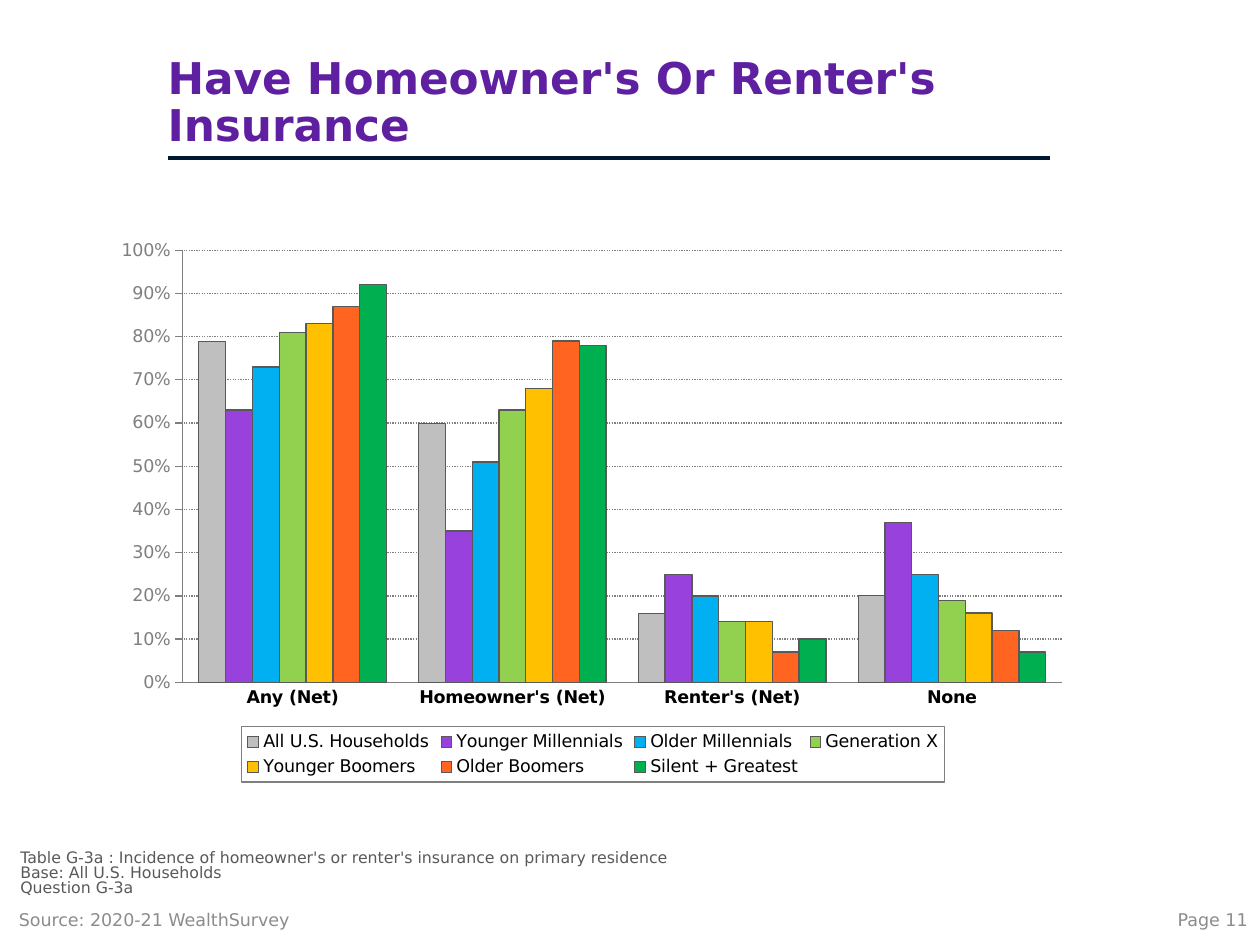
from dataclasses import dataclass

from lxml.etree import SubElement
from pptx import Presentation
from pptx.chart.data import CategoryChartData
from pptx.dml.color import RGBColor
from pptx.enum.chart import XL_CHART_TYPE, XL_LEGEND_POSITION, XL_TICK_MARK
from pptx.enum.dml import MSO_LINE
from pptx.enum.shapes import MSO_CONNECTOR
from pptx.enum.text import MSO_ANCHOR, PP_ALIGN
from pptx.oxml import parse_xml
from pptx.oxml.ns import nsdecls, qn
from pptx.util import Cm, Pt


@dataclass(frozen=True)
class Theme:
    font: str = "DejaVu Sans"
    title: str = "5E20A0"
    rule: str = "00192F"
    note: str = "595959"
    footer: str = "8C8C8C"
    axis: str = "7F7F7F"
    text: str = "000000"
    title_size: float = 25
    body_size: float = 10
    note_size: float = 9


@dataclass(frozen=True)
class Box:
    """A region of the slide, in centimetres."""
    left: float
    top: float
    width: float
    height: float

    def lengths(self):
        return Cm(self.left), Cm(self.top), Cm(self.width), Cm(self.height)


THEME = Theme()
CATEGORIES = ["Any (Net)", "Homeowner's (Net)", "Renter's (Net)", "None"]
GENERATIONS = [
    ("All U.S. Households", "BFBFBF", (0.79, 0.60, 0.16, 0.20)),
    ("Younger Millennials", "9941DD", (0.63, 0.35, 0.25, 0.37)),
    ("Older Millennials", "00B0F0", (0.73, 0.51, 0.20, 0.25)),
    ("Generation X", "92D050", (0.81, 0.63, 0.14, 0.19)),
    ("Younger Boomers", "FFC000", (0.83, 0.68, 0.14, 0.16)),
    ("Older Boomers", "FF6521", (0.87, 0.79, 0.07, 0.12)),
    ("Silent + Greatest", "00B050", (0.92, 0.78, 0.10, 0.07)),
]
NOTES = [
    "Table G-3a : Incidence of homeowner's or renter's insurance on primary residence",
    "Base: All U.S. Households",
    "Question G-3a",
]


def style_font(font, size, color, bold=False):
    font.name = THEME.font
    font.size = Pt(size)
    font.bold = bold
    font.color.rgb = RGBColor.from_string(color)


def style_line(line, color, width):
    line.color.rgb = RGBColor.from_string(color)
    line.width = Pt(width)


def add_text(slide, box, lines, size, color, bold=False, anchor=MSO_ANCHOR.MIDDLE,
             align=PP_ALIGN.LEFT, spacing=1.0, inset=(0.25, 0.13)):
    """Add a text box; inset is the horizontal and vertical margin."""
    frame = slide.shapes.add_textbox(*box.lengths()).text_frame
    frame.word_wrap = True
    frame.vertical_anchor = anchor
    frame.margin_left = frame.margin_right = Cm(inset[0])
    frame.margin_top = frame.margin_bottom = Cm(inset[1])
    frame.text = "\n".join(lines)
    for paragraph in frame.paragraphs:
        paragraph.alignment = align
        paragraph.line_spacing = spacing
        style_font(paragraph.font, size, color, bold)


def add_title(slide, box, title):
    bottom = Cm(box.top + box.height)
    rule = slide.shapes.add_connector(
        MSO_CONNECTOR.STRAIGHT, Cm(box.left), bottom, Cm(box.left + box.width), bottom)
    style_line(rule.line, THEME.rule, 2)
    SubElement(rule.line._get_or_add_ln().getparent(), qn("a:effectLst"))
    add_text(slide, box, [title], THEME.title_size, THEME.title, bold=True,
             anchor=MSO_ANCHOR.BOTTOM, spacing=0.9, inset=(0, 0.13))


def manual_layout(x, y, width, height, inner=False):
    """Return a chart layout given as fractions of the chart area."""
    target = '<c:layoutTarget val="inner"/>' if inner else ""
    return parse_xml(
        f'<c:layout {nsdecls("c")}><c:manualLayout>{target}'
        '<c:xMode val="edge"/><c:yMode val="edge"/>'
        f'<c:x val="{x}"/><c:y val="{y}"/><c:w val="{width}"/><c:h val="{height}"/>'
        '</c:manualLayout></c:layout>')


def style_axes(chart):
    categories, percent = chart.category_axis, chart.value_axis
    style_font(categories.tick_labels.font, THEME.body_size, THEME.text, bold=True)
    categories.major_tick_mark = XL_TICK_MARK.NONE
    style_font(percent.tick_labels.font, THEME.body_size, THEME.axis)
    percent.tick_labels.number_format = "0%"
    percent.tick_labels.number_format_is_linked = False
    percent.major_tick_mark = XL_TICK_MARK.OUTSIDE
    percent.minimum_scale, percent.maximum_scale, percent.major_unit = 0, 1, 0.1
    grid = percent.major_gridlines.format.line
    for line in (categories.format.line, percent.format.line, grid):
        style_line(line, THEME.axis, 0.75)
    grid.dash_style = MSO_LINE.ROUND_DOT


def style_legend(chart):
    chart.has_legend = True
    legend = chart.legend
    legend.position = XL_LEGEND_POSITION.BOTTOM
    legend.include_in_layout = False
    style_font(legend.font, THEME.body_size, THEME.text)
    element = legend._element
    element.find(qn("c:legendPos")).addnext(manual_layout(0.14, 0.9, 0.72, 0.1))
    element.find(qn("c:overlay")).addnext(parse_xml(
        f'<c:spPr {nsdecls("c", "a")}><a:ln w="{Pt(0.75)}"><a:solidFill>'
        f'<a:srgbClr val="{THEME.axis}"/></a:solidFill></a:ln></c:spPr>'))


def add_insurance_chart(slide, box):
    data = CategoryChartData(number_format="0%")
    data.categories = CATEGORIES
    for name, _, shares in GENERATIONS:
        data.add_series(name, shares)
    chart = slide.shapes.add_chart(
        XL_CHART_TYPE.COLUMN_CLUSTERED, *box.lengths(), data).chart
    chart.has_title = False
    style_font(chart.font, THEME.body_size, THEME.text)
    plot = chart.plots[0]
    plot.gap_width = 120
    plot.overlap = 0
    plot.vary_by_categories = False
    for series, (_, color, _) in zip(plot.series, GENERATIONS):
        series.format.fill.solid()
        series.format.fill.fore_color.rgb = RGBColor.from_string(color)
        style_line(series.format.line, THEME.note, 0.75)
    plot.series[0].format.line.width = Pt(0.5)
    style_axes(chart)
    style_legend(chart)
    plot_area = plot._element.getparent()
    for layout in plot_area.findall(qn("c:layout")):
        plot_area.remove(layout)
    plot_area.insert(0, manual_layout(0.08, 0.04, 0.9, 0.78, inner=True))


def add_footer(slide, box, source, page):
    source_box = Box(box.left, box.top, 8.46, box.height)
    page_width = 5.72
    page_box = Box(box.left + box.width - page_width, box.top, page_width, box.height)
    add_text(slide, source_box, [source], THEME.body_size, THEME.footer)
    add_text(slide, page_box, [page], THEME.body_size, THEME.footer, align=PP_ALIGN.RIGHT)


def add_notes(slide, box):
    add_text(slide, box, NOTES, THEME.note_size, THEME.note,
             anchor=MSO_ANCHOR.BOTTOM, spacing=0.8, inset=(0, 0))


def main():
    deck = Presentation()
    deck.slide_width, deck.slide_height = Cm(25.4), Cm(19.05)
    slide = deck.slides.add_slide(deck.slide_layouts[6])
    add_title(slide, Box(3.38, 1.02, 17.78, 2.16), "Have Homeowner's Or Renter's Insurance")
    add_footer(slide, Box(0.13, 18.03, 25.27, 1.02),
               "Source: 2020-21 WealthSurvey", "Page 11")
    add_notes(slide, Box(0.41, 17.17, 24.66, 0.91))
    add_insurance_chart(slide, Box(2.11, 4.6, 19.69, 11.18))
    deck.save("out.pptx")


if __name__ == "__main__":
    main()
